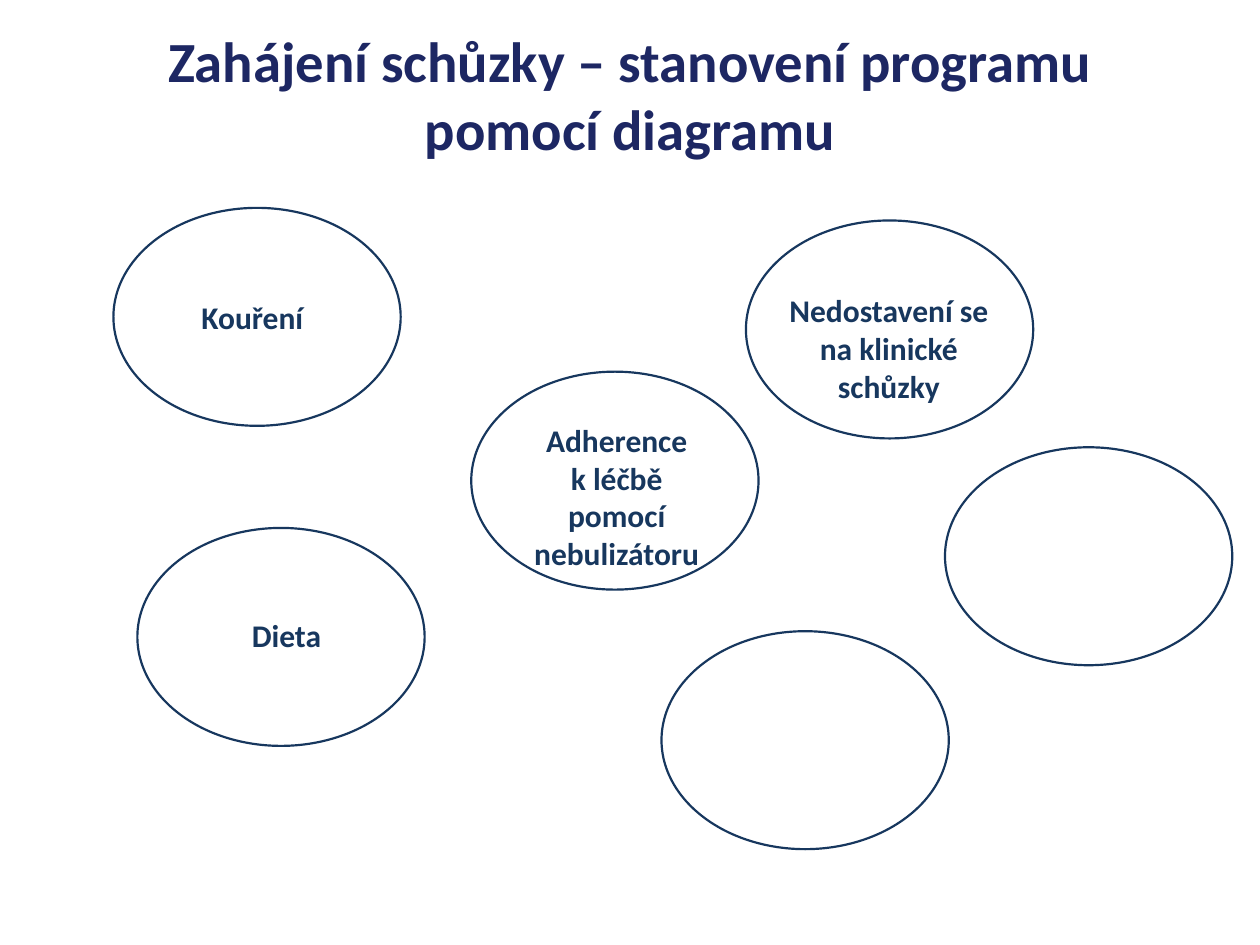
from pptx import Presentation
from pptx.dml.color import RGBColor
from pptx.enum.shapes import MSO_SHAPE
from pptx.enum.text import MSO_ANCHOR, MSO_AUTO_SIZE, PP_ALIGN
from pptx.util import Inches, Pt

COLORS = {"title": "1D2763", "ink": "17375E"}
FONT = "Calibri"

prs = Presentation()
prs.slide_width, prs.slide_height = Inches(10), Inches(7.5)
COL, ROW = prs.slide_width / 100, prs.slide_height / 75  # grid of 100 x 75 units


def box(left, top, width, height):
    """Turn grid units into slide lengths."""
    return int(left * COL), int(top * ROW), int(width * COL), int(height * ROW)


def add_run(p, text, size, color):
    r = p.add_run()
    r.text = text
    r.font.name, r.font.size, r.font.bold = FONT, Pt(size), True
    r.font.color.rgb = RGBColor.from_string(COLORS[color])


s = prs.slides.add_slide(prs.slide_layouts[5])

title = s.shapes.title
title.left, title.top, title.width, title.height = box(5, 3.2, 90, 8.5)
tf = title.text_frame
tf.word_wrap = True
tf.auto_size = MSO_AUTO_SIZE.NONE
tf.vertical_anchor = MSO_ANCHOR.MIDDLE
p = tf.paragraphs[0]
p.alignment = PP_ALIGN.CENTER
add_run(p, "Zahájení schůzky – stanovení programu pomocí diagramu", 32.4, "title")

# Topic bubbles, all of one size; two stay empty for the patient's own topics
BUBBLE_W, BUBBLE_H = 22.8, 17.3
bubbles = [(9, 16.5), (59.2, 17.5), (10.9, 41.9), (75, 35.5), (37.4, 29.5), (52.5, 50.1)]
for left, top in bubbles:
    sp = s.shapes.add_shape(MSO_SHAPE.OVAL, *box(left, top, BUBBLE_W, BUBBLE_H))
    sp.shadow.inherit = False
    sp.fill.background()
    sp.line.color.rgb = RGBColor.from_string(COLORS["ink"])
    sp.line.width = Pt(1.25)

# Topic labels: position, wrapping, alignment, lines
labels = [
    ((19, 48.4, 7.5, 4), False, PP_ALIGN.LEFT, ["Dieta"]),
    ((15, 23.2, 10.1, 4), False, PP_ALIGN.LEFT, ["Kouření"]),
    ((33.8, 32.9, 30.3, 13.1), True, PP_ALIGN.CENTER,
     ["Adherence", "k léčbě", "pomocí", "nebulizátoru"]),
    ((61.6, 22.6, 17.9, 10.1), False, PP_ALIGN.CENTER,
     ["Nedostavení se", "na klinické", "schůzky"]),
]
for place, wrap, align, lines in labels:
    tf = s.shapes.add_textbox(*box(*place)).text_frame
    tf.word_wrap = wrap
    tf.auto_size = MSO_AUTO_SIZE.SHAPE_TO_FIT_TEXT
    for i, line in enumerate(lines):
        p = tf.add_paragraph() if i else tf.paragraphs[0]
        p.alignment = align
        add_run(p, line, 18, "ink")

prs.save("out.pptx")
